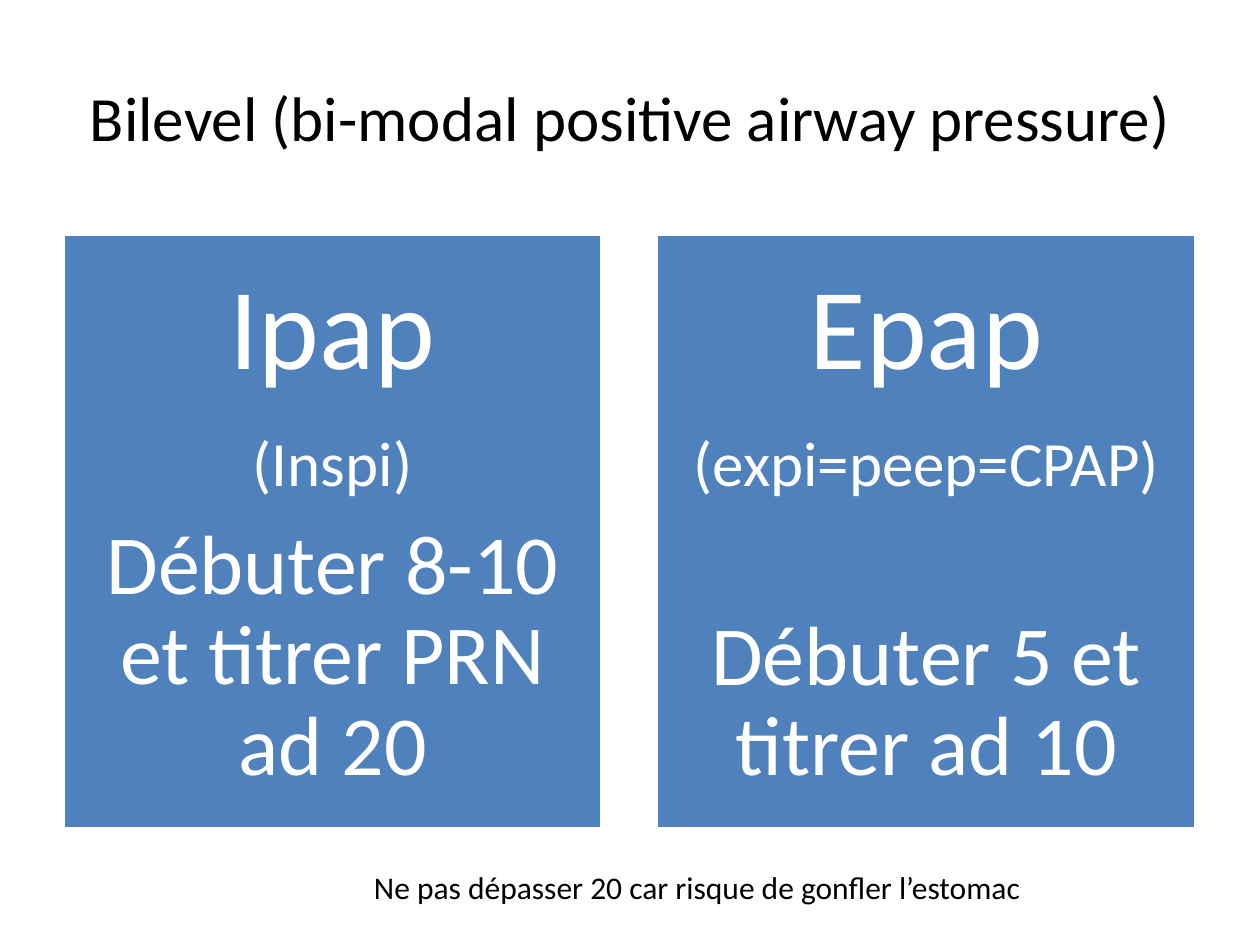
from pptx import Presentation
from pptx.dml.color import RGBColor
from pptx.enum.shapes import MSO_SHAPE
from pptx.enum.text import MSO_ANCHOR, PP_ALIGN
from pptx.util import Cm, Pt

RECT = MSO_SHAPE.RECTANGLE
TOP, MIDDLE = MSO_ANCHOR.TOP, MSO_ANCHOR.MIDDLE
LEFT, CENTER = PP_ALIGN.LEFT, PP_ALIGN.CENTER

TITLE = "Bilevel (bi-modal positive airway pressure)"
MODES = [
    {"lines": ("Ipap", "(Inspi)", "Débuter 8-10 et titrer PRN ad 20"), "gaps": (22, 12, 0)},
    {"lines": ("Epap", "(expi=peep=CPAP)", "Débuter 5 et titrer ad 10"), "gaps": (22, 64, 0)},
]
WARNING = "Ne pas dépasser 20 car risque de gonfler l’estomac"

THEME = {
    "font": "Calibri",
    "ink": RGBColor(0, 0, 0),
    "paper": RGBColor(255, 255, 255),
    "card": RGBColor(0x4F, 0x81, 0xBD),
    "title": 36,
    "mode": (66, 36, 48),
    "warning": 18,
}
CARD_X, CARD_Y, CARD_W, CARD_H, CARD_GAP = 1.27, 4.72, 10.87, 11.99, 1.1
CARD_INSET = Cm(0.71)


def add_run(p, text, size, color, align):
    p.alignment = align
    r = p.add_run()
    r.text = text
    r.font.name = THEME["font"]
    r.font.size = Pt(size)
    r.font.color.rgb = color


def add_label(s, box, text, size, align, anchor, wrap):
    tf = s.shapes.add_textbox(*map(Cm, box)).text_frame
    tf.word_wrap = wrap
    tf.vertical_anchor = anchor
    add_run(tf.paragraphs[0], text, size, THEME["ink"], align)


def add_card(s, left, mode):
    sp = s.shapes.add_shape(RECT, Cm(left), Cm(CARD_Y), Cm(CARD_W), Cm(CARD_H))
    sp.shadow.inherit = False
    sp.fill.solid()
    sp.fill.fore_color.rgb = THEME["card"]
    sp.line.color.rgb = THEME["paper"]
    sp.line.width = Pt(2)
    tf = sp.text_frame
    tf.word_wrap = True
    tf.vertical_anchor = TOP
    tf.margin_left = tf.margin_right = tf.margin_top = tf.margin_bottom = CARD_INSET
    for i, (text, size, gap) in enumerate(zip(mode["lines"], THEME["mode"], mode["gaps"])):
        p = tf.add_paragraph() if i else tf.paragraphs[0]
        p.line_spacing = 0.9
        p.space_after = Pt(gap)
        add_run(p, text, size, THEME["paper"], CENTER)


def main():
    prs = Presentation()
    prs.slide_width, prs.slide_height = Cm(25.4), Cm(19.05)
    s = prs.slides.add_slide(prs.slide_layouts[6])
    add_label(s, (1.27, 0.76, 22.86, 3.18), TITLE, THEME["title"], CENTER, MIDDLE, True)
    for i, mode in enumerate(MODES):
        add_card(s, CARD_X + i * (CARD_W + CARD_GAP), mode)
    add_label(s, (7.29, 17.37, 13.72, 1.02), WARNING, THEME["warning"], LEFT, TOP, False)
    prs.save("out.pptx")


if __name__ == "__main__":
    main()
